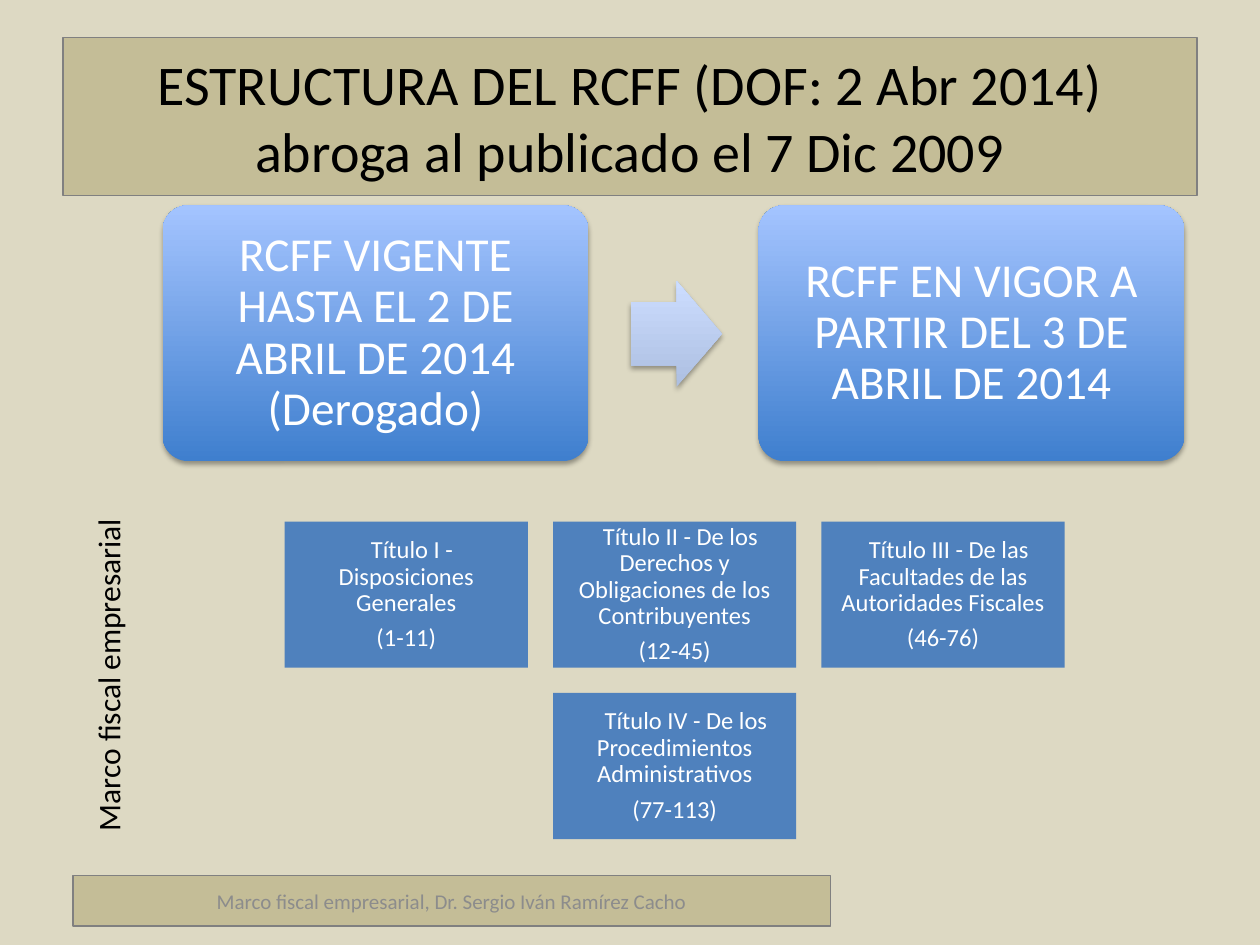
from lxml import etree
from pptx import Presentation
from pptx.dml.color import RGBColor
from pptx.enum.shapes import MSO_SHAPE
from pptx.enum.text import MSO_ANCHOR, MSO_AUTO_SIZE, PP_ALIGN
from pptx.oxml.ns import qn
from pptx.util import Inches, Pt

RECT, ROUND = MSO_SHAPE.RECTANGLE, MSO_SHAPE.ROUNDED_RECTANGLE
ARROW = MSO_SHAPE.RIGHT_ARROW
CENTER, LEFT = PP_ALIGN.CENTER, PP_ALIGN.LEFT
MIDDLE = MSO_ANCHOR.MIDDLE
TITLE_ONLY = 5

FONT = "Calibri"
SAND, TAN, GRAY = "DDD9C3", "C4BD97", "808080"
BLUE, WHITE, BLACK = "4F81BD", "FFFFFF", "000000"
DARK_GRADIENT = ("3F7FCE", "A4C4FF")
PALE_GRADIENT = ("ADBFE1", "CCDDFF")

# Heading, article range, first-line indent, column, row
SECTIONS = [
    ("Título I - Disposiciones Generales", "(1-11)", 0.09, 0, 0),
    ("Título II - De los Derechos y Obligaciones de los Contribuyentes",
     "(12-45)", 0.09, 1, 0),
    ("Título III - De las Facultades de las Autoridades Fiscales",
     "(46-76)", 0.09, 2, 0),
    ("Título IV - De los Procedimientos Administrativos",
     "(77-113)", 0.18, 1, 1),
]


def rgb(hex_color):
    return RGBColor.from_string(hex_color)


def place(shape, x, y, w, h):
    shape.left, shape.top = Inches(x), Inches(y)
    shape.width, shape.height = Inches(w), Inches(h)


def write(shape, lines, size, color, align=CENTER, inset=None, stacked=False):
    """Fill a shape with paragraphs; stacked text has tight lines and gaps."""
    tf = shape.text_frame
    tf.text = "\n".join(lines)
    tf.word_wrap = True
    tf.auto_size = MSO_AUTO_SIZE.NONE
    tf.vertical_anchor = MIDDLE
    if inset is not None:
        tf.margin_left = tf.margin_right = Inches(inset)
        tf.margin_top = tf.margin_bottom = Inches(inset)
    for p in tf.paragraphs:
        p.alignment = align
        p.font.name, p.font.size = FONT, Pt(size)
        p.font.color.rgb = rgb(color)
        if stacked:
            p.line_spacing = 0.9
            p.space_after = Pt(round(size * 0.35, 1))
    return tf


def add_box(s, kind, x, y, w, h):
    sp = s.shapes.add_shape(kind, Inches(x), Inches(y), Inches(w), Inches(h))
    sp.shadow.inherit = False
    sp.line.fill.background()
    return sp


def paint_panel(shape):
    """Tan fill with a thin gray outline."""
    shape.fill.solid()
    shape.fill.fore_color.rgb = rgb(TAN)
    shape.line.color.rgb = rgb(GRAY)
    shape.line.width = Pt(0.75)


def add_glossy(s, kind, x, y, w, h, colors, adjustments):
    """Shape with a bottom-to-top gradient and a soft drop shadow."""
    sp = add_box(s, kind, x, y, w, h)
    for i, value in enumerate(adjustments):
        sp.adjustments[i] = value
    sp.fill.gradient()
    sp.fill.gradient_angle = 90
    for stop, color, position in zip(sp.fill.gradient_stops, colors, (0, 1)):
        stop.color.rgb = rgb(color)
        stop.position = position
    effects = sp._element.spPr.find(qn("a:effectLst"))
    shadow = etree.SubElement(
        effects, qn("a:outerShdw"), blurRad=str(Pt(3.1)), dist=str(Pt(1.8)),
        dir="5400000", rotWithShape="0")
    color = etree.SubElement(shadow, qn("a:srgbClr"), val=BLACK)
    etree.SubElement(color, qn("a:alpha"), val="35000")
    return sp


def add_stage(s, x, text):
    sp = add_glossy(s, ROUND, x, 1.63, 3.38, 2.03, DARK_GRADIENT, [0.1])
    write(sp, [text], 27, WHITE, inset=0.11, stacked=True)


def add_section(s, heading, articles, indent, col, row):
    sp = add_box(s, RECT, 2.26 + col * 2.13, 4.14 + row * 1.36, 1.93, 1.16)
    sp.fill.solid()
    sp.fill.fore_color.rgb = rgb(BLUE)
    tf = write(sp, [heading, articles], 14, WHITE, inset=0.06, stacked=True)
    pPr = tf.paragraphs[0]._p.get_or_add_pPr()
    pPr.set("marL", "0")
    pPr.set("indent", str(Inches(indent)))


def main():
    prs = Presentation()
    prs.slide_width, prs.slide_height = Inches(10), Inches(7.5)
    s = prs.slides.add_slide(prs.slide_layouts[TITLE_ONLY])
    s.background.fill.solid()
    s.background.fill.fore_color.rgb = rgb(SAND)

    # Title
    title = s.shapes.title
    place(title, 0.5, 0.3, 9, 1.25)
    paint_panel(title)
    write(title, ["ESTRUCTURA DEL RCFF (DOF: 2 Abr 2014) "
                  "abroga al publicado el 7 Dic 2009"], 32, BLACK)

    # Vertical label on the left edge
    label = s.shapes.add_textbox(
        Inches(-1.62), Inches(4.02), Inches(4.95), Inches(0.4))
    label.rotation = 270
    write(label, ["Marco fiscal empresarial"], 18, BLACK, align=LEFT)

    # Old and new regulation
    add_stage(s, 1.29, "RCFF VIGENTE HASTA EL 2 DE ABRIL DE 2014 (Derogado)")
    add_glossy(s, ARROW, 5.01, 2.23, 0.72, 0.84, PALE_GRADIENT, [0.6, 0.5])
    add_stage(s, 6.02, "RCFF EN VIGOR A PARTIR DEL 3 DE ABRIL DE 2014")

    # Sections of the new regulation
    for section in SECTIONS:
        add_section(s, *section)

    # Footer
    footer = add_box(s, RECT, 0.58, 6.95, 6.01, 0.4)
    paint_panel(footer)
    write(footer, ["Marco fiscal empresarial, Dr. Sergio Iván Ramírez Cacho"],
          12, "8C8C8C")

    prs.save("out.pptx")


if __name__ == "__main__":
    main()
